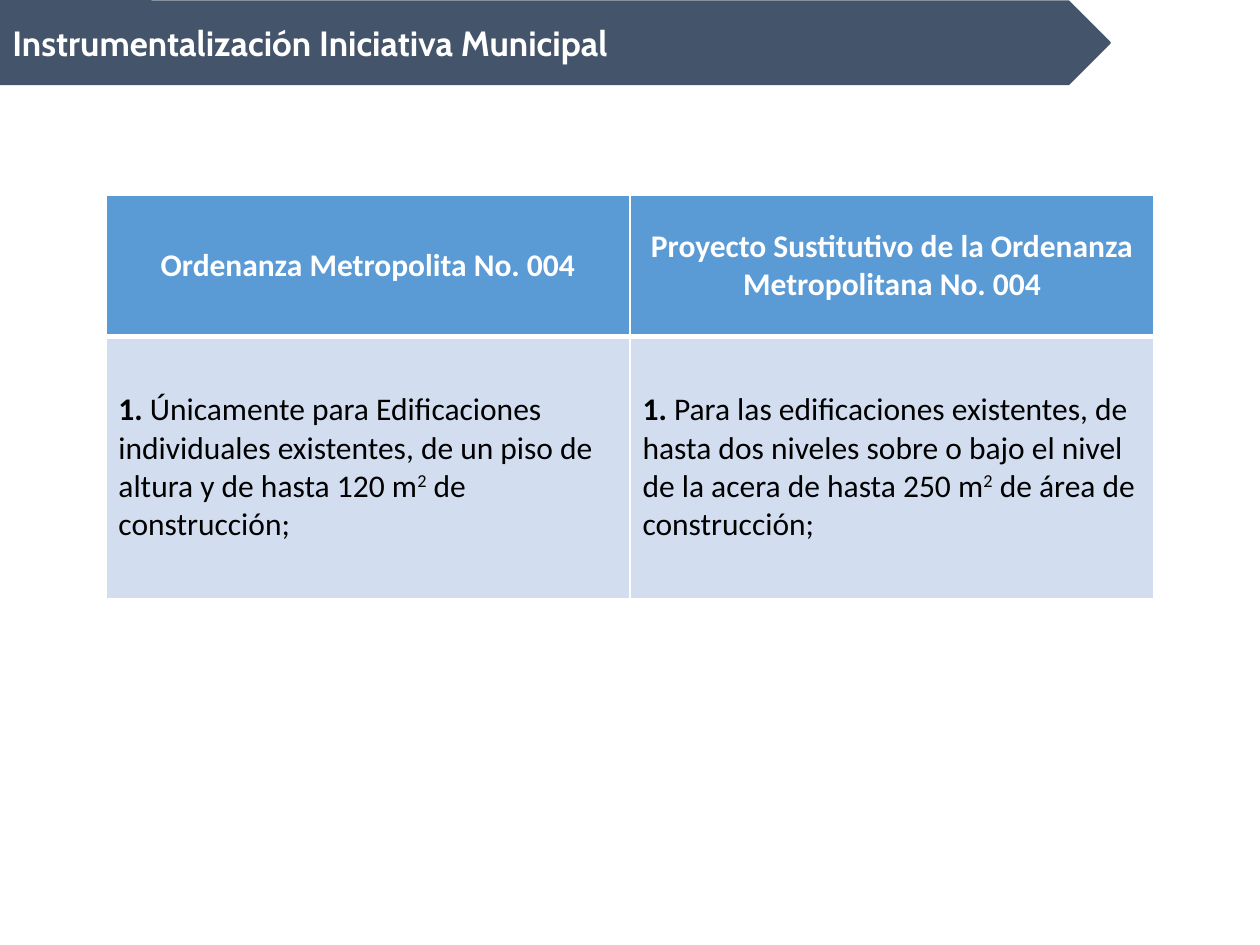
from lxml import etree
from pptx import Presentation
from pptx.dml.color import RGBColor
from pptx.enum.shapes import MSO_SHAPE
from pptx.enum.text import MSO_ANCHOR, PP_ALIGN
from pptx.oxml.ns import qn
from pptx.util import Inches, Pt

RECTANGLE, PENTAGON = MSO_SHAPE.RECTANGLE, MSO_SHAPE.PENTAGON
MIDDLE = MSO_ANCHOR.MIDDLE
LEFT, CENTER = PP_ALIGN.LEFT, PP_ALIGN.CENTER

TITLE = "Instrumentalización Iniciativa Municipal"
HEADINGS = [
    "Ordenanza Metropolita No. 004",
    "Proyecto Sustitutivo de la Ordenanza Metropolitana No. 004",
]
PROVISIONS = [
    ("1.", " Únicamente para Edificaciones individuales existentes, de un piso de altura y de hasta 120 m",
     "2", " de construcción;"),
    ("1.", " Para las edificaciones existentes, de hasta dos niveles sobre o bajo el nivel de la acera de hasta 250 m",
     "2", " de área de construcción;"),
]

THEME = {
    "banner": "44546A", "heading": "5B9BD5", "provision": "D2DEEF",
    "white": "FFFFFF", "black": "000000",
    "title_font": "Cabin", "table_font": "Calibri",
    "title_size": 20, "table_size": 18,
}
BANNER_TOP, BANNER_HEIGHT = 0.01, 0.66
TABLE_LEFT, TABLE_TOP, COLUMN_WIDTH = 0.84, 1.55, 4.16
ROW_HEIGHTS = [1.12, 2.08]
THIN, THICK = 1, 3


def color(name):
    return RGBColor.from_string(THEME[name])


def add_run(paragraph, text, part, ink, bold=False, superscript=False):
    run = paragraph.add_run()
    run.text = text
    run.font.name = THEME[f"{part}_font"]
    run.font.size = Pt(THEME[f"{part}_size"])
    run.font.bold = bold
    run.font.color.rgb = color(ink)
    if superscript:
        run._r.get_or_add_rPr().set("baseline", "30000")


def add_banner_part(group, kind, width):
    part = group.shapes.add_shape(kind, 0, Inches(BANNER_TOP), Inches(width), Inches(BANNER_HEIGHT))
    part.shadow.inherit = False
    part.fill.solid()
    part.fill.fore_color.rgb = color("banner")
    part.line.color.rgb = color("banner")
    part.line.width = Pt(1)
    return part


def set_borders(cell, top, bottom):
    properties = cell._tc.get_or_add_tcPr()
    sides = [("lnL", THIN), ("lnR", THIN), ("lnT", top), ("lnB", bottom)]
    for index, (side, width) in enumerate(sides):
        border = etree.Element(qn(f"a:{side}"), w=str(Pt(width)))
        fill = etree.SubElement(border, qn("a:solidFill"))
        etree.SubElement(fill, qn("a:srgbClr"), val=THEME["white"])
        properties.insert(index, border)


def style_cell(cell, fill, align, top, bottom):
    cell.fill.solid()
    cell.fill.fore_color.rgb = color(fill)
    set_borders(cell, top, bottom)
    cell.vertical_anchor = MIDDLE
    paragraph = cell.text_frame.paragraphs[0]
    paragraph.alignment = align
    return paragraph


def add_banner(slide):
    banner = slide.shapes.add_group_shape()
    add_banner_part(banner, RECTANGLE, 1.2)
    arrow = add_banner_part(banner, PENTAGON, 8.81)
    arrow.text_frame.word_wrap = True
    arrow.text_frame.vertical_anchor = MIDDLE
    paragraph = arrow.text_frame.paragraphs[0]
    paragraph.alignment = LEFT
    add_run(paragraph, TITLE, "title", "white", bold=True)


def add_comparison(slide):
    table = slide.shapes.add_table(
        len(ROW_HEIGHTS), len(HEADINGS), Inches(TABLE_LEFT), Inches(TABLE_TOP),
        Inches(COLUMN_WIDTH * len(HEADINGS)), Inches(sum(ROW_HEIGHTS))).table
    for row, height in zip(table.rows, ROW_HEIGHTS):
        row.height = Inches(height)
    for column, (heading, provision) in enumerate(zip(HEADINGS, PROVISIONS)):
        table.columns[column].width = Inches(COLUMN_WIDTH)
        paragraph = style_cell(table.cell(0, column), "heading", CENTER, THIN, THICK)
        add_run(paragraph, heading, "table", "white", bold=True)
        paragraph = style_cell(table.cell(1, column), "provision", LEFT, THICK, THIN)
        number, rule, exponent, ending = provision
        add_run(paragraph, number, "table", "black", bold=True)
        add_run(paragraph, rule, "table", "black")
        add_run(paragraph, exponent, "table", "black", superscript=True)
        add_run(paragraph, ending, "table", "black")


def main():
    presentation = Presentation()
    presentation.slide_width = Inches(10)
    presentation.slide_height = Inches(7.5)
    slide = presentation.slides.add_slide(presentation.slide_layouts[6])
    add_banner(slide)
    add_comparison(slide)
    presentation.save("out.pptx")


if __name__ == "__main__":
    main()
